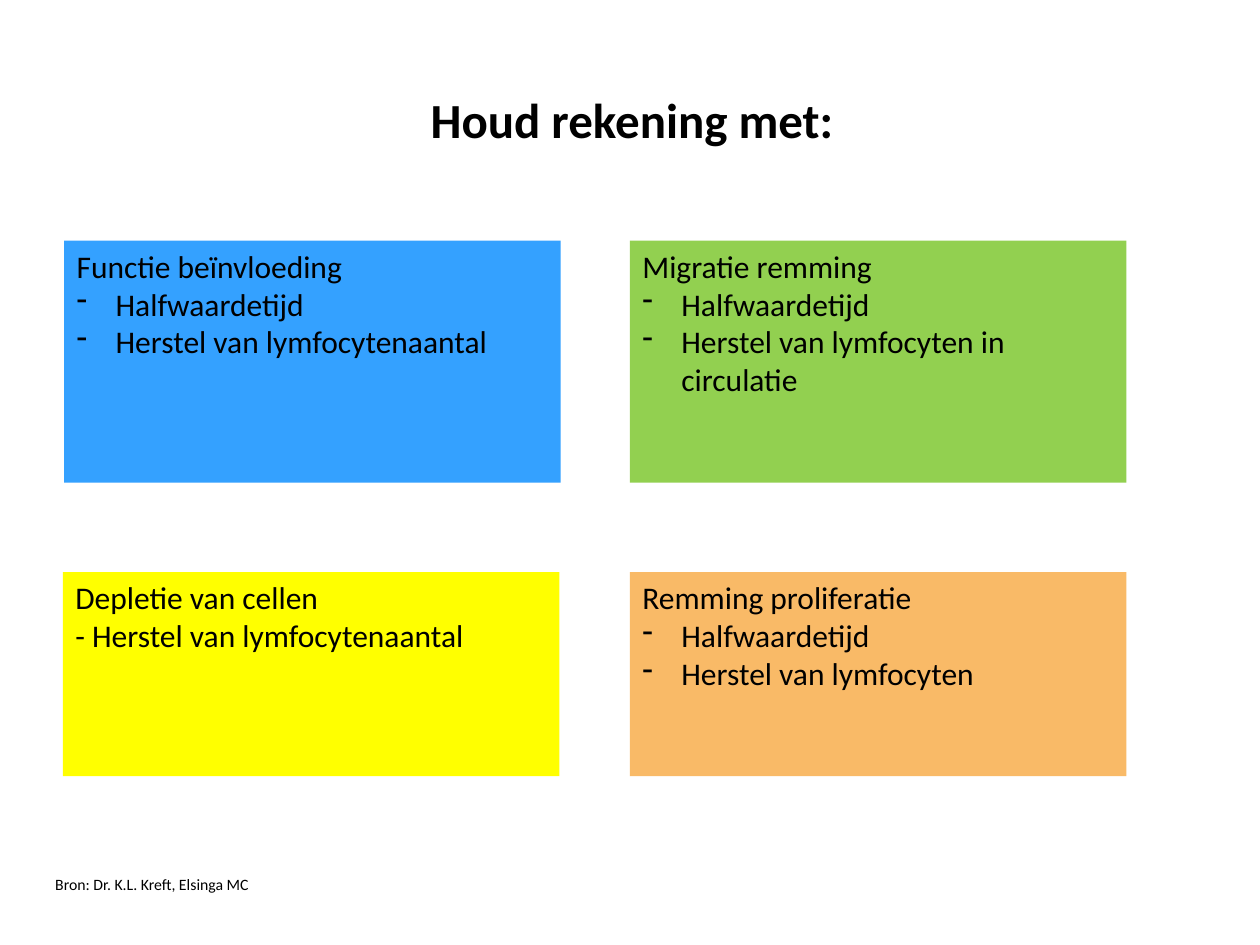
from dataclasses import dataclass

from lxml.etree import SubElement
from pptx import Presentation
from pptx.dml.color import RGBColor
from pptx.enum.shapes import MSO_SHAPE
from pptx.enum.text import MSO_ANCHOR, PP_ALIGN
from pptx.oxml.ns import qn
from pptx.util import Inches, Pt


@dataclass(frozen=True)
class Theme:
    font: str = "Calibri"
    text: str = "000000"
    blue: str = "34A1FF"
    green: str = "92D050"
    yellow: str = "FFFF00"
    orange: str = "F9BA67"
    title_size: int = 28
    body_size: int = 18
    source_size: int = 9


class SlideBuilder:
    def __init__(self, page, theme):
        self.page = page
        self.theme = theme

    def format_text(self, frame, size, align=PP_ALIGN.LEFT, bold=False):
        for para in frame.paragraphs:
            para.alignment = align
            for span in para.runs:
                span.font.name = self.theme.font
                span.font.size = Pt(size)
                span.font.bold = bold
                span.font.color.rgb = RGBColor.from_string(self.theme.text)

    def add_dash(self, para):
        """Give the paragraph a dash bullet with a hanging indent."""
        properties = para._p.get_or_add_pPr()
        indent = Inches(0.31)
        properties.set("marL", str(indent))
        properties.set("indent", str(-indent))
        SubElement(properties, qn("a:buFontTx"))
        SubElement(properties, qn("a:buChar")).set("char", "-")

    def title(self, text, left, top, width, height):
        box = self.page.shapes.title
        box.left, box.top = Inches(left), Inches(top)
        box.width, box.height = Inches(width), Inches(height)
        frame = box.text_frame
        frame.text = text
        frame.vertical_anchor = MSO_ANCHOR.BOTTOM
        self.format_text(frame, self.theme.title_size, PP_ALIGN.CENTER, True)

    def card(self, heading, items, color, left, top, width, height, bulleted=True):
        box = self.page.shapes.add_shape(
            MSO_SHAPE.RECTANGLE, Inches(left), Inches(top), Inches(width), Inches(height)
        )
        box.shadow.inherit = False
        box.fill.solid()
        box.fill.fore_color.rgb = RGBColor.from_string(color)
        box.line.fill.background()
        frame = box.text_frame
        frame.word_wrap = True
        frame.vertical_anchor = MSO_ANCHOR.TOP
        frame.text = "\n".join([heading, *items])
        self.format_text(frame, self.theme.body_size)
        if bulleted:
            for para in frame.paragraphs[1:]:
                self.add_dash(para)

    def source(self, text, left, top, width, height):
        box = self.page.shapes.add_textbox(
            Inches(left), Inches(top), Inches(width), Inches(height)
        )
        frame = box.text_frame
        frame.word_wrap = True
        frame.text = text
        self.format_text(frame, self.theme.source_size)


def main():
    deck = Presentation()
    deck.slide_width, deck.slide_height = Inches(10), Inches(7.5)
    theme = Theme()
    builder = SlideBuilder(deck.slides.add_slide(deck.slide_layouts[5]), theme)

    builder.title("Houd rekening met:", 0.36, 0.56, 9.31, 0.67)

    card_width, right_column = 3.94, 5
    upper_row = {"top": 1.91, "width": card_width, "height": 1.92}
    lower_row = {"top": 4.54, "width": card_width, "height": 1.62}
    half_life = "Halfwaardetijd"
    recovery = "Herstel van lymfocyten"
    count_recovery = f"{recovery[:-2]}enaantal"
    builder.card("Functie beïnvloeding", [half_life, count_recovery],
                 theme.blue, left=0.51, **upper_row)
    builder.card("Migratie remming", [half_life, f"{recovery} in circulatie"],
                 theme.green, left=right_column, **upper_row)
    builder.card("Depletie van cellen", [f"- {count_recovery}"],
                 theme.yellow, left=0.5, bulleted=False, **lower_row)
    builder.card("Remming proliferatie", [half_life, recovery],
                 theme.orange, left=right_column, **lower_row)

    builder.source("Bron: Dr. K.L. Kreft, Elsinga MC", 0.34, 6.89, 9.26, 0.25)
    deck.save("out.pptx")


if __name__ == "__main__":
    main()
